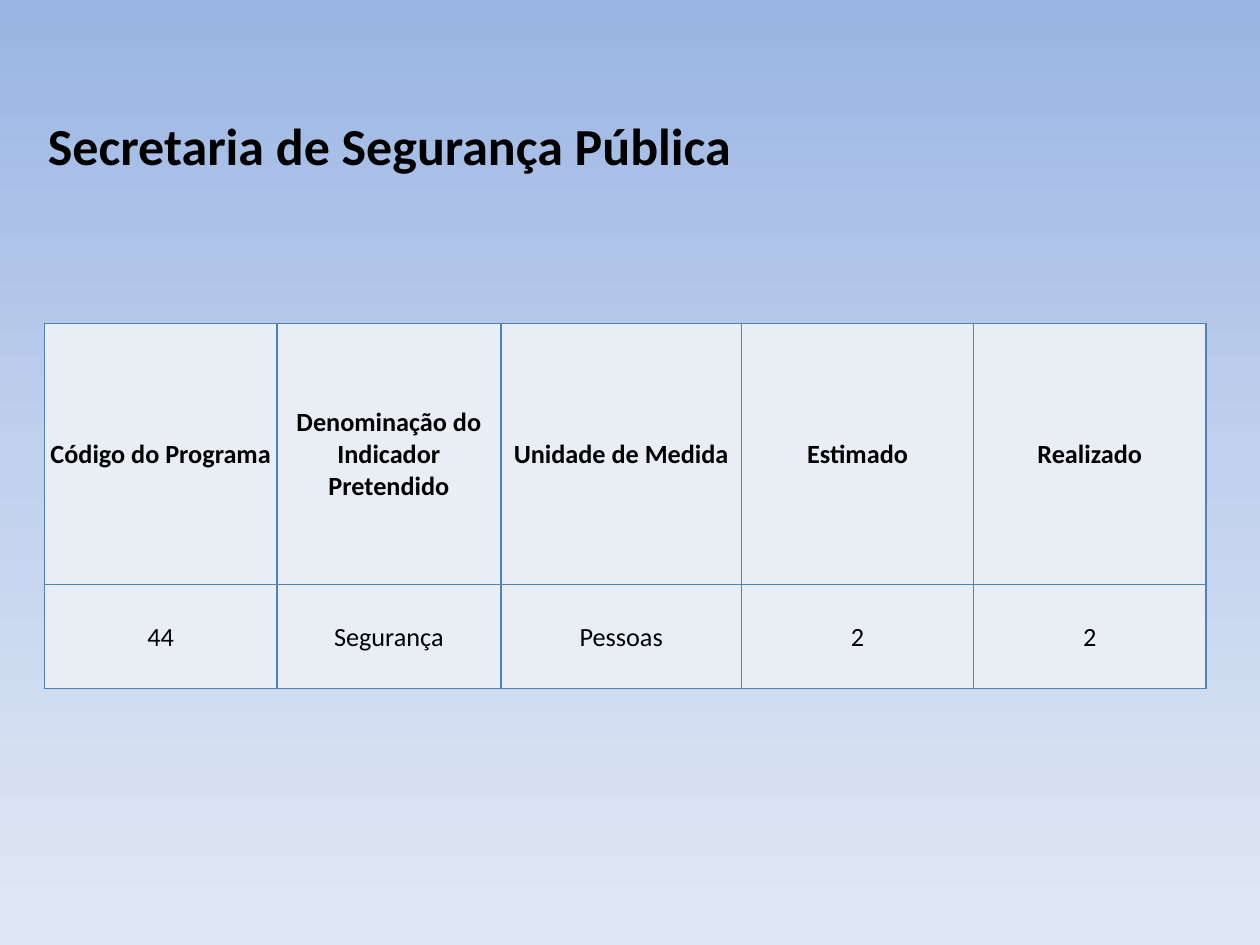
import copy

import pptx
import pptx.dml.color
import pptx.enum.text
import pptx.oxml
import pptx.oxml.ns
import pptx.util

Cm = pptx.util.Cm
Pt = pptx.util.Pt
RGBColor = pptx.dml.color.RGBColor
ALIGN = pptx.enum.text.PP_ALIGN
MIDDLE = pptx.enum.text.MSO_ANCHOR.MIDDLE

FONT = "Calibri"
BLACK = RGBColor(0x00, 0x00, 0x00)
CELL_FILL = RGBColor(0xE9, 0xED, 0xF4)
BORDER = RGBColor(0x4F, 0x81, 0xBD)
BACKGROUND_STOPS = [
    (0, RGBColor(0x9A, 0xB5, 0xE4)),
    (0.5, RGBColor(0xC2, 0xD1, 0xED)),
    (1, RGBColor(0xE1, 0xE8, 0xF5)),
]

INDICATORS = [
    ["Código do Programa", "Denominação do Indicador Pretendido",
     "Unidade de Medida", "Estimado", "Realizado"],
    ["44", "Segurança", "Pessoas", "2", "2"],
]
COLUMN_WIDTHS = [Cm(4.68), Cm(4.52), Cm(4.85), Cm(4.68), Cm(4.68)]
ROW_HEIGHTS = [Cm(5.26), Cm(2.1)]


def write_text(frame, text, size, bold=False, align=ALIGN.LEFT):
    frame.word_wrap = True
    paragraph = frame.paragraphs[0]
    paragraph.alignment = align
    run = paragraph.add_run()
    run.text = text
    run.font.name = FONT
    run.font.size = Pt(size)
    run.font.bold = bold
    run.font.color.rgb = BLACK


def paint_background(slide):
    fill = slide.background.fill
    fill.gradient()
    fill.gradient_angle = 270
    stop_list = slide.element.xpath(".//p:bg//a:gsLst")[0]
    stop_list.append(copy.deepcopy(stop_list[-1]))
    for stop, (position, color) in zip(fill.gradient_stops, BACKGROUND_STOPS):
        stop.position = position
        stop.color.rgb = color


def add_title(slide, text):
    title = slide.shapes.title
    title.left, title.top = Cm(0.71), Cm(1.31)
    title.width, title.height = Cm(21.59), Cm(3.2)
    title.text_frame.auto_size = pptx.enum.text.MSO_AUTO_SIZE.NONE
    title.text_frame.vertical_anchor = MIDDLE
    write_text(title.text_frame, text, size=29.7, bold=True)


def outline_cell(cell):
    """Draw the four borders; they must come before the fill in the XML."""
    properties = cell._tc.get_or_add_tcPr()
    for index, side in enumerate(("lnL", "lnR", "lnT", "lnB")):
        properties.insert(index, pptx.oxml.parse_xml(
            f'<a:{side} {pptx.oxml.ns.nsdecls("a")} w="{Pt(1)}"><a:solidFill>'
            f'<a:srgbClr val="{BORDER}"/></a:solidFill></a:{side}>'))


def format_cell(cell, text, bold):
    cell.margin_left = cell.margin_right = cell.margin_top = Cm(0.03)
    cell.margin_bottom = 0
    cell.vertical_anchor = MIDDLE
    cell.fill.solid()
    cell.fill.fore_color.rgb = CELL_FILL
    outline_cell(cell)
    write_text(cell.text_frame, text, size=15, bold=bold, align=ALIGN.CENTER)


def add_indicator_table(slide):
    table = slide.shapes.add_table(
        len(ROW_HEIGHTS), len(COLUMN_WIDTHS), Cm(0.9), Cm(6.52),
        sum(COLUMN_WIDTHS), sum(ROW_HEIGHTS)).table
    for column, width in zip(table.columns, COLUMN_WIDTHS):
        column.width = width
    for index, (row, height) in enumerate(zip(table.rows, ROW_HEIGHTS)):
        row.height = height
        for cell, text in zip(row.cells, INDICATORS[index]):
            format_cell(cell, text, bold=index == 0)


def main():
    presentation = pptx.Presentation()
    presentation.slide_width, presentation.slide_height = Cm(25.4), Cm(19.05)
    title_only = presentation.slide_layouts[5]
    slide = presentation.slides.add_slide(title_only)
    paint_background(slide)
    add_title(slide, "Secretaria de Segurança Pública")
    add_indicator_table(slide)
    presentation.save("out.pptx")


if __name__ == "__main__":
    main()
